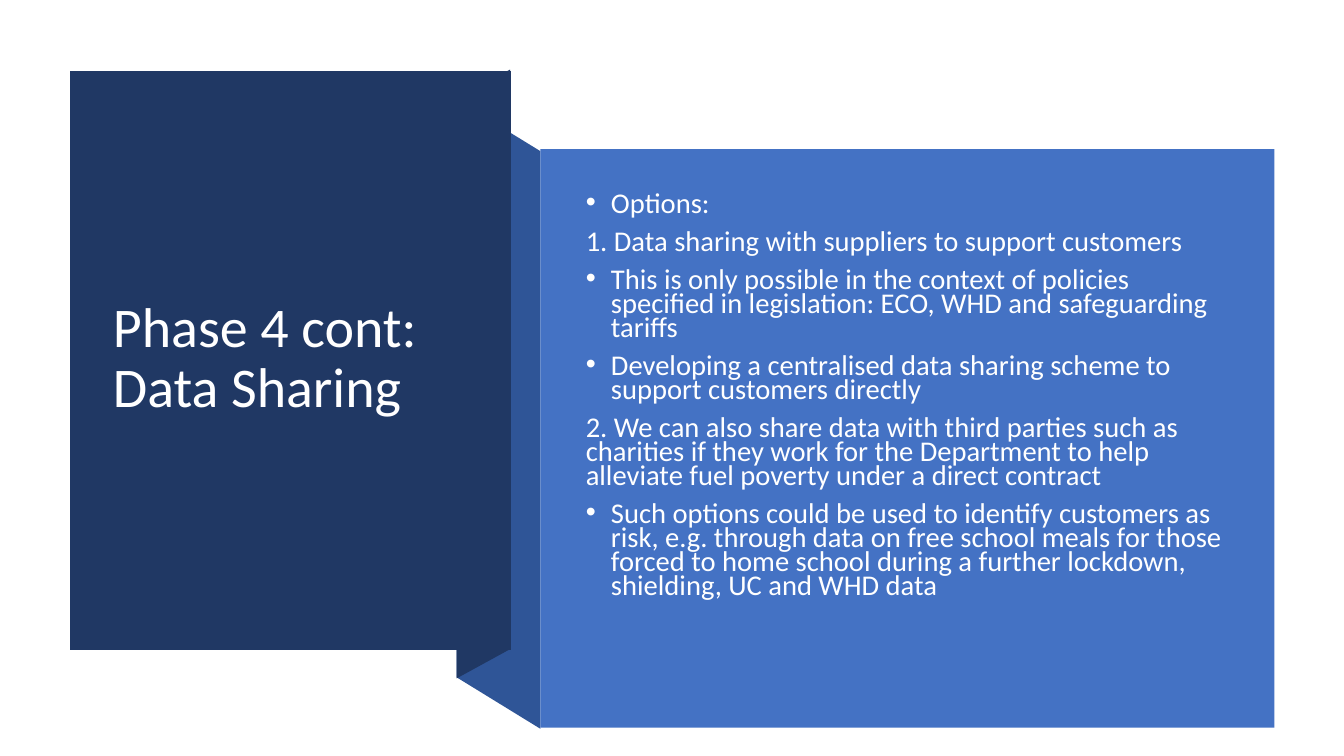
from lxml.etree import SubElement
from pptx import Presentation
from pptx.dml.color import RGBColor
from pptx.enum.shapes import MSO_SHAPE
from pptx.enum.text import MSO_ANCHOR, MSO_AUTO_SIZE, PP_ALIGN
from pptx.oxml.ns import qn
from pptx.util import Inches, Pt

WHITE = RGBColor(0xFF, 0xFF, 0xFF)
NAVY = RGBColor(0x20, 0x38, 0x64)
MID_BLUE = RGBColor(0x2F, 0x55, 0x97)
BLUE = RGBColor(0x44, 0x72, 0xC4)

FOLDS = [
    (MID_BLUE, [(5.36, 7.23), (4.53, 6.72), (4.53, 0.99), (5.36, 1.5)]),
    (NAVY, [(5.06, 6.44), (4.53, 6.73), (4.53, 0.98), (5.06, 0.69)]),
    (NAVY, [(0.69, 0.7), (5.07, 0.7), (5.07, 6.45), (0.69, 6.45)]),
]

OPTIONS = [
    (True, "Options:"),
    (False, "1. Data sharing with suppliers to support customers"),
    (True, "This is only possible in the context of policies specified in "
           "legislation: ECO, WHD and safeguarding tariffs"),
    (True, "Developing a centralised data sharing scheme to support "
           "customers directly"),
    (False, "2. We can also share data with third parties such as charities if "
            "they work for the Department to help alleviate fuel poverty under "
            "a direct contract"),
    (True, "Such options could be used to identify customers as risk, e.g. "
           "through data on free school meals for those forced to home school "
           "during a further lockdown, shielding, UC and WHD data"),
]


def fill_plain(panel, color):
    panel.shadow.inherit = False
    panel.fill.solid()
    panel.fill.fore_color.rgb = color
    panel.line.fill.background()


def add_text(paragraph, text, size, spacing):
    paragraph.alignment = PP_ALIGN.LEFT
    paragraph.line_spacing = spacing
    run = paragraph.add_run()
    run.text = text
    run.font.name = "Calibri"
    run.font.size = Pt(size)
    run.font.color.rgb = WHITE


prs = Presentation()
prs.slide_width = Inches(13.33)
prs.slide_height = Inches(7.5)
slide = prs.slides.add_slide(prs.slide_layouts[1])
title, options = slide.placeholders
shapes = slide.shapes

for color, corners in FOLDS:
    points = [(Inches(x), Inches(y)) for x, y in corners]
    outline = shapes.build_freeform(*points[0], scale=1.0)
    outline.add_line_segments(points[1:], close=True)
    fill_plain(outline.convert_to_shape(), color)

options_panel = shapes.add_shape(
    MSO_SHAPE.RECTANGLE, Inches(5.36), Inches(1.48), Inches(7.28), Inches(5.74))
fill_plain(options_panel, BLUE)

for holder, box, anchor in [
    (title, (1.02, 1.07, 3.71, 4.99), MSO_ANCHOR.MIDDLE),
    (options, (5.71, 1.88, 6.51, 4.74), MSO_ANCHOR.TOP),
]:
    holder.left, holder.top, holder.width, holder.height = map(Inches, box)
    holder.text_frame.word_wrap = True
    holder.text_frame.auto_size = MSO_AUTO_SIZE.NONE
    holder.text_frame.vertical_anchor = anchor
    shapes._spTree.append(holder._element)

add_text(title.text_frame.paragraphs[0], "Phase 4 cont: Data Sharing", 40, 0.9)

for i, (bulleted, text) in enumerate(OPTIONS):
    frame = options.text_frame
    paragraph = frame.add_paragraph() if i else frame.paragraphs[0]
    add_text(paragraph, text, 20.4, 0.7)
    paragraph.space_before = Pt(10 if i else 0)
    props = paragraph._p.get_or_add_pPr()
    indent = Inches(0.25) if bulleted else 0
    props.set("marL", str(indent))
    props.set("indent", str(-indent))
    if bulleted:
        SubElement(props, qn("a:buFont"), typeface="Arial")
        SubElement(props, qn("a:buChar"), char="•")
    else:
        SubElement(props, qn("a:buNone"))

prs.save("out.pptx")
